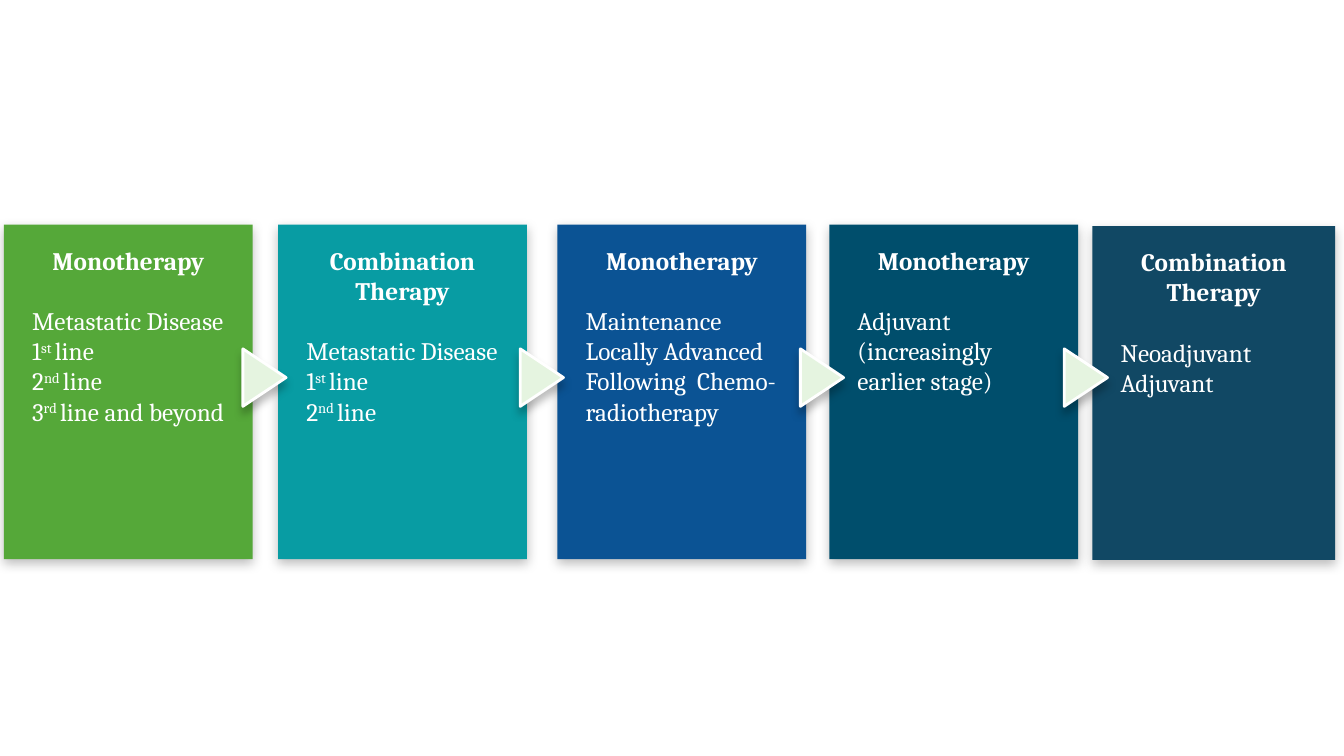
from pptx import Presentation
from pptx.dml.color import RGBColor
from pptx.enum.shapes import MSO_SHAPE
from pptx.enum.text import MSO_ANCHOR, PP_ALIGN
from pptx.oxml import parse_xml
from pptx.oxml.ns import nsdecls
from pptx.util import Cm, Pt

CARD_TOP, CARD_WIDTH, CARD_HEIGHT = 5.66, 6.27, 8.43
ARROW_TOP, ARROW_WIDTH, ARROW_HEIGHT = 8.97, 1.45, 1.09
ARROW_LEFTS = (5.94, 12.93, 19.99, 26.64)

# Left, top, width, height, fill, heading, lines; ^ encloses a superscript.
CARDS = (
    (0.1, CARD_TOP, CARD_WIDTH, CARD_HEIGHT, "55A839", "Monotherapy",
     ("Metastatic Disease", "1^st ^line", "2^nd ^line",
      "3^rd ^line and beyond")),
    (7.01, CARD_TOP, CARD_WIDTH, CARD_HEIGHT, "089CA3", "Combination Therapy",
     ("Metastatic Disease", "1^st ^line", "2^nd ^line")),
    (14.05, CARD_TOP, CARD_WIDTH, CARD_HEIGHT, "0B5394", "Monotherapy",
     ("Maintenance", "Locally Advanced", "Following  Chemo-", "radiotherapy")),
    (20.9, CARD_TOP, CARD_WIDTH, CARD_HEIGHT, "004E6C", "Monotherapy",
     ("Adjuvant (increasingly earlier stage)",)),
    (27.53, 5.7, 6.12, 8.41, "114864", "Combination Therapy",
     ("Neoadjuvant", "Adjuvant")),
)


def color(value):
    return RGBColor.from_string(value)


def assign(target, values):
    for name, value in values.items():
        setattr(target, name, value)


class TherapySlide:
    font = {"name": "Cambria", "size": Pt(18)}
    text_color = "FFFFFF"
    frame = {
        "word_wrap": True, "vertical_anchor": MSO_ANCHOR.TOP,
        "margin_left": Cm(0.71), "margin_right": Cm(0.71),
        "margin_top": Cm(0.51), "margin_bottom": 0,
    }
    heading = {"alignment": PP_ALIGN.CENTER, "space_after": Pt(21.6)}
    body = {"alignment": PP_ALIGN.LEFT}

    def __init__(self, page):
        self.page = page

    def shape(self, kind, left, top, width, height, fill, blur, distance):
        """Add a filled shape with a soft shadow below it."""
        box = self.page.shapes.add_shape(
            kind, Cm(left), Cm(top), Cm(width), Cm(height))
        box.fill.solid()
        box.fill.fore_color.rgb = color(fill)
        box.line.fill.background()
        box.shadow.inherit = False
        effects = box.element.spPr.find(
            "{http://schemas.openxmlformats.org/drawingml/2006/main}effectLst")
        effects.append(parse_xml(
            f'<a:outerShdw {nsdecls("a")} blurRad="{Pt(blur)}" '
            f'dist="{Pt(distance)}" dir="5400000" rotWithShape="0">'
            '<a:srgbClr val="000000"><a:alpha val="25000"/></a:srgbClr>'
            '</a:outerShdw>'))
        return box

    def text(self, para, content, layout, bold):
        assign(para, layout)
        for index, part in enumerate(content.split("^")):
            span = para.add_run()
            span.text = part
            assign(span.font, self.font | {"bold": bold})
            span.font.color.rgb = color(self.text_color)
            if index % 2:
                span.font._element.set("baseline", "30000")

    def card(self, left, top, width, height, fill, heading, lines):
        box = self.shape(MSO_SHAPE.RECTANGLE, left, top, width, height,
                         fill, blur=8, distance=3)
        frame = box.text_frame
        assign(frame, self.frame)
        self.text(frame.paragraphs[0], heading, self.heading, True)
        for line in lines:
            self.text(frame.add_paragraph(), line, self.body, False)

    def arrow(self, left):
        box = self.shape(MSO_SHAPE.ISOSCELES_TRIANGLE, left, ARROW_TOP,
                         ARROW_WIDTH, ARROW_HEIGHT, "E5F4E0",
                         blur=6, distance=5)
        box.rotation = 90
        box.line.color.rgb = color("FFFFFF")
        box.line.width = Pt(2)


def main():
    deck = Presentation()
    assign(deck, {"slide_width": Cm(33.87), "slide_height": Cm(19.05)})
    slide = TherapySlide(deck.slides.add_slide(deck.slide_layouts[6]))
    for card in CARDS:
        slide.card(*card)
    for left in ARROW_LEFTS:
        slide.arrow(left)
    deck.save("out.pptx")


if __name__ == "__main__":
    main()
